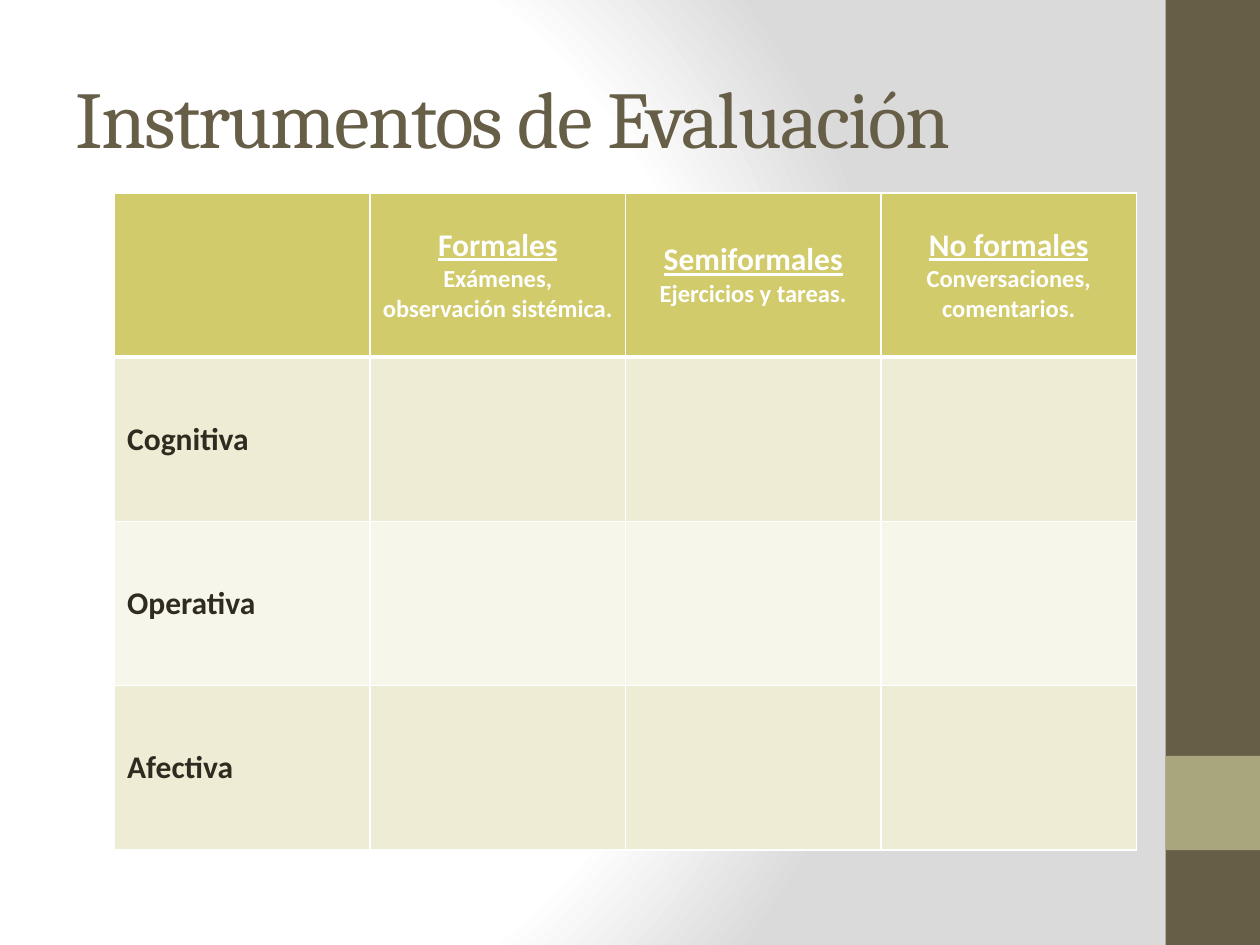
"""Build a slide with a grid of evaluation instruments by area."""
import pptx
import pptx.dml.color
import pptx.enum.shapes
import pptx.enum.text
import pptx.oxml
import pptx.oxml.ns
import pptx.util
from pptx.util import Cm

RGBColor = pptx.dml.color.RGBColor
Align = pptx.enum.text.PP_ALIGN
Anchor = pptx.enum.text.MSO_ANCHOR

BROWN = RGBColor(0x67, 0x5E, 0x47)
SAGE = RGBColor(0xA9, 0xA5, 0x7C)
OLIVE = RGBColor(0xD2, 0xCB, 0x6C)
CREAM = RGBColor(0xEE, 0xEC, 0xD4)
IVORY = RGBColor(0xF7, 0xF6, 0xEB)
DARK = RGBColor(0x2F, 0x2B, 0x20)
WHITE = RGBColor(0xFF, 0xFF, 0xFF)
GREY = RGBColor(0xDA, 0xDA, 0xDA)

TITLE = "Instrumentos de Evaluación"
INSTRUMENTS = [
    ("Formales", "Exámenes, observación sistémica."),
    ("Semiformales", "Ejercicios y tareas."),
    ("No formales", "Conversaciones, comentarios."),
]
AREAS = ["Cognitiva", "Operativa", "Afectiva"]
BANDS = [(0, 19.05, BROWN), (15.24, 1.9, SAGE)]
GRADIENT = [(0, WHITE), (75, WHITE), (100, GREY)]
COLUMN_WIDTH, ROW_HEIGHT = Cm(5.15), Cm(3.31)
NAMESPACES = pptx.oxml.ns.nsdecls("a", "p")


def write(para, text, size, color, font="Calibri", bold=True, underline=False,
          align=Align.LEFT, spacing=None):
    """Add one formatted span to a paragraph."""
    para.alignment = align
    span = para.add_run()
    span.text = text
    span.font.name = font
    span.font.size = pptx.util.Pt(size)
    span.font.bold = bold
    span.font.underline = underline
    span.font.color.rgb = color
    if spacing is not None:
        span.font._element.set("spc", str(spacing * 100))


def paint_background(page):
    """Give the page its radial gradient."""
    stops = "".join(
        f'<a:gs pos="{place * 1000}"><a:srgbClr val="{color}"/></a:gs>'
        for place, color in GRADIENT)
    page.element.cSld.insert(0, pptx.oxml.parse_xml(
        f'<p:bg {NAMESPACES}><p:bgPr><a:gradFill rotWithShape="1">'
        f'<a:gsLst>{stops}</a:gsLst><a:path path="circle">'
        '<a:fillToRect l="20000" t="50000" r="100000" b="50000"/></a:path>'
        '</a:gradFill><a:effectLst/></p:bgPr></p:bg>'))


def style_cell(cell, fill, top, bottom):
    """Set the white borders, the fill and the anchor of a cell."""
    properties = cell._tc.get_or_add_tcPr()
    for side, width in (("L", 1), ("R", 1), ("T", top), ("B", bottom)):
        properties.append(pptx.oxml.parse_xml(
            f'<a:ln{side} {NAMESPACES} w="{width * 12700}"><a:solidFill>'
            f'<a:srgbClr val="{WHITE}"/></a:solidFill></a:ln{side}>'))
    cell.fill.solid()
    cell.fill.fore_color.rgb = fill
    cell.vertical_anchor = Anchor.MIDDLE


def add_bands(page):
    """Draw the side bands."""
    for top, height, color in BANDS:
        band = page.shapes.add_shape(
            pptx.enum.shapes.MSO_SHAPE.RECTANGLE,
            Cm(23.5), Cm(top), Cm(1.9), Cm(height))
        band.shadow.inherit = False
        band.fill.solid()
        band.fill.fore_color.rgb = color
        band.line.fill.background()


def add_title(page):
    """Place the title."""
    box = page.shapes.add_textbox(Cm(1.27), Cm(0.76), Cm(21.16), Cm(3.18))
    box.text_frame.word_wrap = True
    box.text_frame.vertical_anchor = Anchor.MIDDLE
    write(box.text_frame.paragraphs[0], TITLE, 46, BROWN,
          font="Cambria", bold=False, spacing=-1)


def add_grid(page):
    """Place the table of areas against instruments."""
    rows, columns = len(AREAS) + 1, len(INSTRUMENTS) + 1
    table = page.shapes.add_table(
        rows, columns, Cm(2.31), Cm(3.89),
        COLUMN_WIDTH * columns, ROW_HEIGHT * rows).table
    fills = [OLIVE, CREAM, IVORY, CREAM]
    for row, fill in enumerate(fills):
        for column in range(columns):
            style_cell(table.cell(row, column), fill,
                       top=3 if row == 1 else 1, bottom=3 if row == 0 else 1)
    for column, (name, examples) in enumerate(INSTRUMENTS, 1):
        frame = table.cell(0, column).text_frame
        write(frame.paragraphs[0], name, 18, WHITE,
              underline=True, align=Align.CENTER)
        write(frame.add_paragraph(), examples, 14, WHITE, align=Align.CENTER)
    for row, area in enumerate(AREAS, 1):
        write(table.cell(row, 0).text_frame.paragraphs[0], area, 18, DARK)


def main():
    """Build and save the deck."""
    deck = pptx.Presentation()
    deck.slide_width, deck.slide_height = Cm(25.4), Cm(19.05)
    page = deck.slides.add_slide(deck.slide_layouts[6])
    paint_background(page)
    add_bands(page)
    add_title(page)
    add_grid(page)
    deck.save("out.pptx")


if __name__ == "__main__":
    main()
